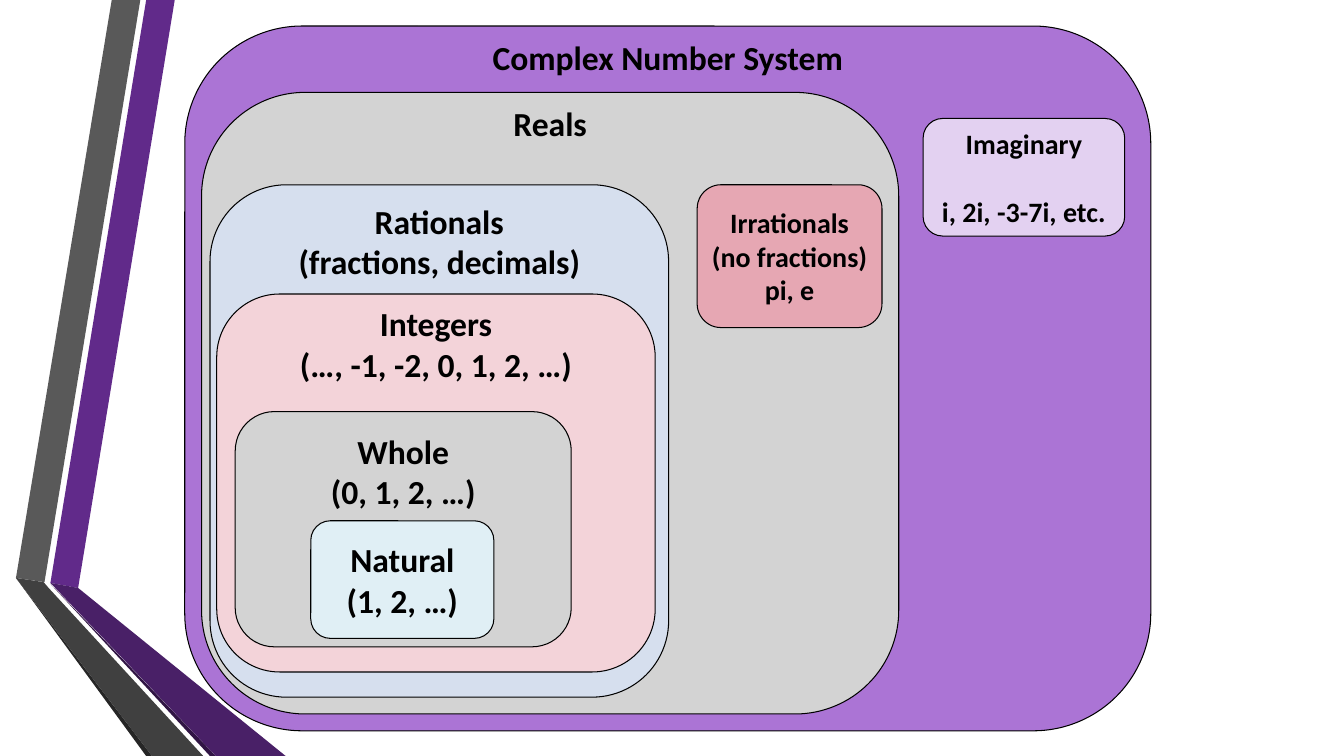
from dataclasses import dataclass

from pptx import Presentation
from pptx.dml.color import RGBColor
from pptx.enum.shapes import MSO_SHAPE
from pptx.enum.text import MSO_ANCHOR, PP_ALIGN
from pptx.util import Inches, Pt

SET_SHAPE = MSO_SHAPE.FLOWCHART_ALTERNATE_PROCESS
TOP, MIDDLE = MSO_ANCHOR.TOP, MSO_ANCHOR.MIDDLE
CENTER = PP_ALIGN.CENTER

# The slide is a grid of 160 columns by 90 rows of square cells
COLUMNS, ROWS = 160, 90
CELL = Inches(7.5) / ROWS


@dataclass(frozen=True)
class Theme:
    font: str = "Calibri"
    ink: str = "000000"
    outline: float = 0.75
    large: int = 24
    small: int = 20
    purple: str = "612A8A"
    purple_fold: str = "492067"
    purple_edge: str = "311545"
    gray: str = "595959"
    gray_fold: str = "404040"
    gray_edge: str = "262626"
    complex_fill: str = "AB74D5"
    neutral_fill: str = "D3D3D3"
    rational_fill: str = "D6DFEE"
    integer_fill: str = "F3D3D9"
    natural_fill: str = "E0EFF5"
    irrational_fill: str = "E6A7B3"
    imaginary_fill: str = "E3D1F1"


THEME = Theme()

# Ribbon outlines as (column, row) corners
RIBBONS = [
    (THEME.purple, [(6, 69.4), (9.3, 70), (20.8, 0), (17.4, 0)]),
    (THEME.gray, [(1.9, 68.8), (5.3, 69.3), (16.7, 0), (13.3, 0)]),
    (THEME.gray_edge, [(1.9, 68.8), (17.4, 90), (18.1, 90)]),
    (THEME.purple_edge, [(6, 69.5), (25, 90), (25.7, 90)]),
    (THEME.purple_fold, [(6, 69.4), (25.7, 90), (34, 90), (9.3, 70)]),
    (THEME.gray_fold, [(1.9, 68.8), (18.1, 90), (24.2, 90), (5.8, 70), (5.2, 69.3)]),
]

# Nested sets, outermost first: box, fill, rows above the label, label lines
NESTED_SETS = [
    ((22, 3.1, 115, 83.9), THEME.complex_fill, 1.3, ["Complex Number System"]),
    ((24, 11, 83, 74), THEME.neutral_fill, 1.2, ["Reals"]),
    ((25, 22, 54.6, 61), THEME.rational_fill, 1.9,
     ["Rationals", "(fractions, decimals)"]),
    ((25.8, 35, 52.2, 45), THEME.integer_fill, 1.1,
     ["Integers", "(…, -1, -2, 0, 1, 2, …)"]),
    ((28, 49, 40, 28), THEME.neutral_fill, 2.3, ["Whole", "(0, 1, 2, …)"]),
]

# Innermost and side sets: box, fill, type size, gap after the name, label lines
SINGLE_SETS = [
    ((37, 62, 21.8, 14), THEME.natural_fill, THEME.large, 0,
     ["Natural", "(1, 2, …)"]),
    ((83, 22, 22, 17), THEME.irrational_fill, THEME.small, 0,
     ["Irrationals", "(no fractions)", "pi, e"]),
    ((109.9, 14.1, 24, 14), THEME.imaginary_fill, THEME.small, 24.4,
     ["Imaginary", "i, 2i, -3-7i, etc."]),
]


def cells(*lengths):
    return [round(length * CELL) for length in lengths]


def paint(shape, color):
    shape.shadow.inherit = False
    shape.fill.solid()
    shape.fill.fore_color.rgb = RGBColor.from_string(color)


def write_label(frame, lines, size, anchor, name_gap=0):
    frame.vertical_anchor = anchor
    frame.margin_left = frame.margin_right = 0
    frame.margin_top = frame.margin_bottom = 0
    for index, line in enumerate(lines):
        paragraph = frame.paragraphs[0] if index == 0 else frame.add_paragraph()
        paragraph.alignment = CENTER
        if index == 0 and name_gap:
            paragraph.space_after = Pt(name_gap)
        run = paragraph.add_run()
        run.text = line
        run.font.name = THEME.font
        run.font.size = Pt(size)
        run.font.bold = True
        run.font.color.rgb = RGBColor.from_string(THEME.ink)


def draw_set(slide, box, fill):
    number_set = slide.shapes.add_shape(SET_SHAPE, *cells(*box))
    paint(number_set, fill)
    number_set.line.color.rgb = RGBColor.from_string(THEME.ink)
    number_set.line.width = Pt(THEME.outline)
    return number_set


def draw_ribbons(slide):
    for color, corners in RIBBONS:
        start, *others = [cells(*corner) for corner in corners]
        outline = slide.shapes.build_freeform(*start)
        outline.add_line_segments(others, close=True)
        ribbon = outline.convert_to_shape()
        paint(ribbon, color)
        ribbon.line.fill.background()


def draw_nested_set(slide, box, fill, label_offset, lines):
    draw_set(slide, box, fill)
    left, top, width, _ = box
    label = slide.shapes.add_textbox(
        *cells(left, top + label_offset, width, 4.88 * len(lines)))
    label.text_frame.word_wrap = True
    write_label(label.text_frame, lines, THEME.large, TOP)


def draw_single_set(slide, box, fill, size, name_gap, lines):
    frame = draw_set(slide, box, fill).text_frame
    frame.word_wrap = False
    write_label(frame, lines, size, MIDDLE, name_gap)


def main():
    deck = Presentation()
    deck.slide_width, deck.slide_height = cells(COLUMNS, ROWS)
    slide = deck.slides.add_slide(deck.slide_layouts[6])

    # Folded ribbons along the left edge
    draw_ribbons(slide)

    # Number sets, from the widest to the narrowest
    for nested in NESTED_SETS:
        draw_nested_set(slide, *nested)
    for single in SINGLE_SETS:
        draw_single_set(slide, *single)

    deck.save("out.pptx")


if __name__ == "__main__":
    main()
